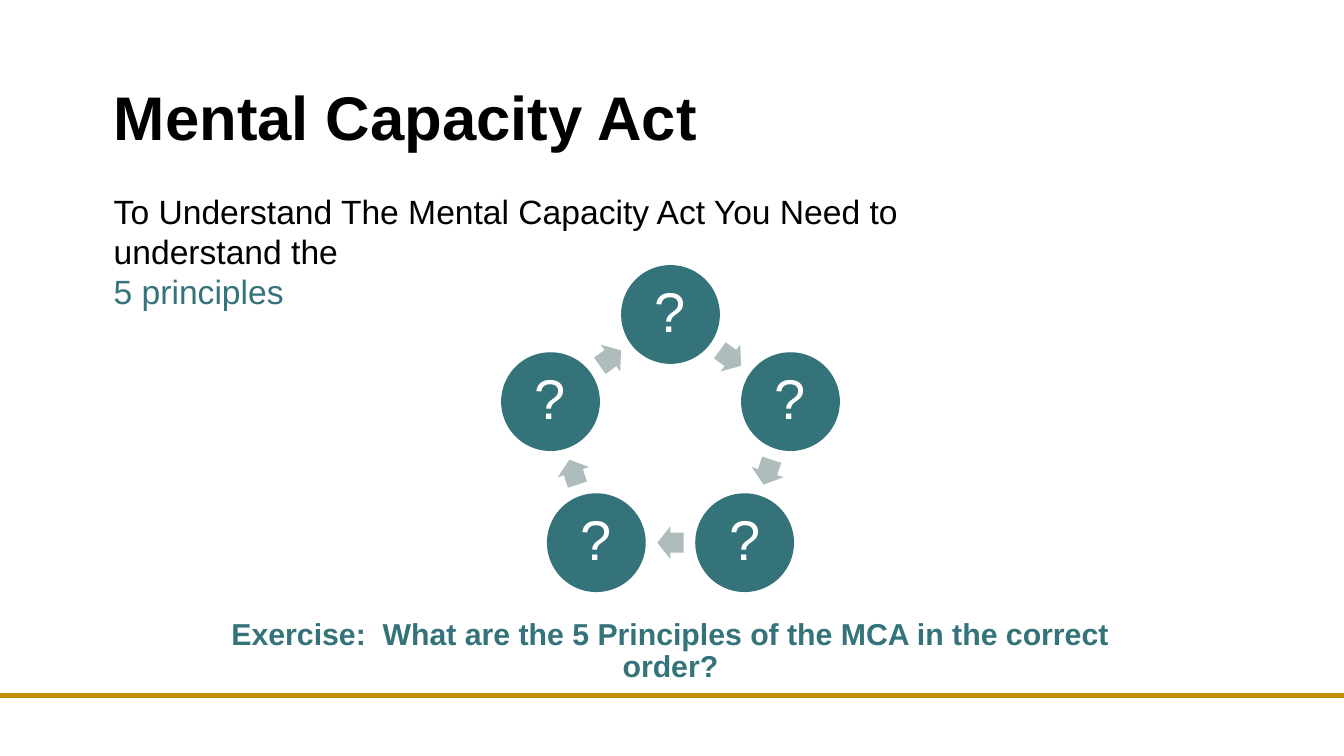
from math import cos, radians, sin

from lxml import etree
from pptx import Presentation
from pptx.dml.color import RGBColor
from pptx.enum.shapes import MSO_CONNECTOR, MSO_SHAPE
from pptx.enum.text import MSO_ANCHOR as Anchor, PP_ALIGN as Align
from pptx.oxml.ns import qn
from pptx.util import Inches, Pt

BLACK, WHITE = "000000", "FFFFFF"
TEAL, GREY, GOLD = "34737A", "AEBCBE", "C09102"


def color(hex_string):
    return RGBColor.from_string(hex_string)


def add_run(paragraph, text, size, hex_string, bold=False):
    run = paragraph.add_run()
    run.text = text
    run.font.name = "Arial"
    run.font.size = Pt(size)
    run.font.bold = bold
    run.font.color.rgb = color(hex_string)


def add_text_box(slide, box):
    text_box = slide.shapes.add_textbox(*map(Inches, box))
    text_box.text_frame.word_wrap = True
    return text_box.text_frame


def add_title(slide, box):
    title = slide.shapes.title
    title.left, title.top, title.width, title.height = map(Inches, box)
    title.text_frame.vertical_anchor = Anchor.TOP
    paragraph = title.text_frame.paragraphs[0]
    paragraph.alignment = Align.LEFT
    paragraph.line_spacing = 1.0
    add_run(paragraph, "Mental Capacity Act", 44, BLACK, bold=True)


def add_introduction(slide, box):
    paragraph = add_text_box(slide, box).paragraphs[0]
    add_run(paragraph, "To Understand The Mental Capacity Act You Need to understand the", 24, BLACK)
    paragraph.add_line_break()
    add_run(paragraph, "5 principles", 24, TEAL)


def add_exercise(slide, box):
    frame = add_text_box(slide, box)
    frame.vertical_anchor = Anchor.MIDDLE
    paragraph = frame.paragraphs[0]
    paragraph.alignment = Align.CENTER
    paragraph.line_spacing = 0.9
    add_run(paragraph, "Exercise:  What are the 5 Principles of the MCA in the correct order?",
            21.6, TEAL, bold=True)


def add_cycle_shape(slide, preset, center, orbit, angle, size, fill):
    """Centre a shape on a circle of radius orbit, angle degrees clockwise from the top."""
    width, height = size
    left = center[0] + orbit * sin(radians(angle)) - width / 2
    top = center[1] - orbit * cos(radians(angle)) - height / 2
    shape = slide.shapes.add_shape(preset, *map(Inches, (left, top, width, height)))
    shape.shadow.inherit = False
    shape.fill.solid()
    shape.fill.fore_color.rgb = color(fill)
    shape.line.fill.background()
    return shape


def add_principles_cycle(slide, box, count=5):
    left, top, width, diameter = *box[:3], 0.98
    step = 360 / count
    orbit = (width - diameter) / 2 / sin(radians(step))
    center = (left + width / 2, top + diameter / 2 + orbit)
    for index in range(count):
        angle = index * step
        circle = add_cycle_shape(slide, MSO_SHAPE.OVAL, center, orbit, angle, (diameter, diameter), TEAL)
        frame = circle.text_frame
        frame.margin_left = frame.margin_right = frame.margin_top = frame.margin_bottom = Inches(0.06)
        frame.vertical_anchor = Anchor.MIDDLE
        paragraph = frame.paragraphs[0]
        paragraph.alignment = Align.CENTER
        paragraph.line_spacing = 0.9
        add_run(paragraph, "?", 40, WHITE)

        arrow_angle = angle + step / 2
        arrow = add_cycle_shape(slide, MSO_SHAPE.RIGHT_ARROW, center, orbit * cos(radians(step / 2)),
                                arrow_angle, (0.26, 0.33), GREY)
        arrow.adjustments[0] = 0.6
        arrow.adjustments[1] = 0.5
        arrow.rotation = arrow_angle


def add_footer_line(slide, top, width):
    line = slide.shapes.add_connector(MSO_CONNECTOR.STRAIGHT, 0, Inches(top), width, Inches(top))
    line.line.color.rgb = color(GOLD)
    line.line.width = Pt(3)
    etree.SubElement(line._element.spPr, qn("a:effectLst"))


def main():
    presentation = Presentation()
    presentation.slide_width = Inches(13.33)
    presentation.slide_height = Inches(7.5)
    slide = presentation.slides.add_slide(presentation.slide_layouts[5])
    add_footer_line(slide, 6.9, presentation.slide_width)
    add_title(slide, (1.03, 0.73, 6.85, 0.84))
    add_introduction(slide, (1.03, 1.84, 8.9, 1.31))
    add_principles_cycle(slide, (4.97, 2.63, 3.36, 3.24))
    add_exercise(slide, (2.12, 6.07, 9.06, 0.79))
    presentation.save("out.pptx")


if __name__ == "__main__":
    main()
